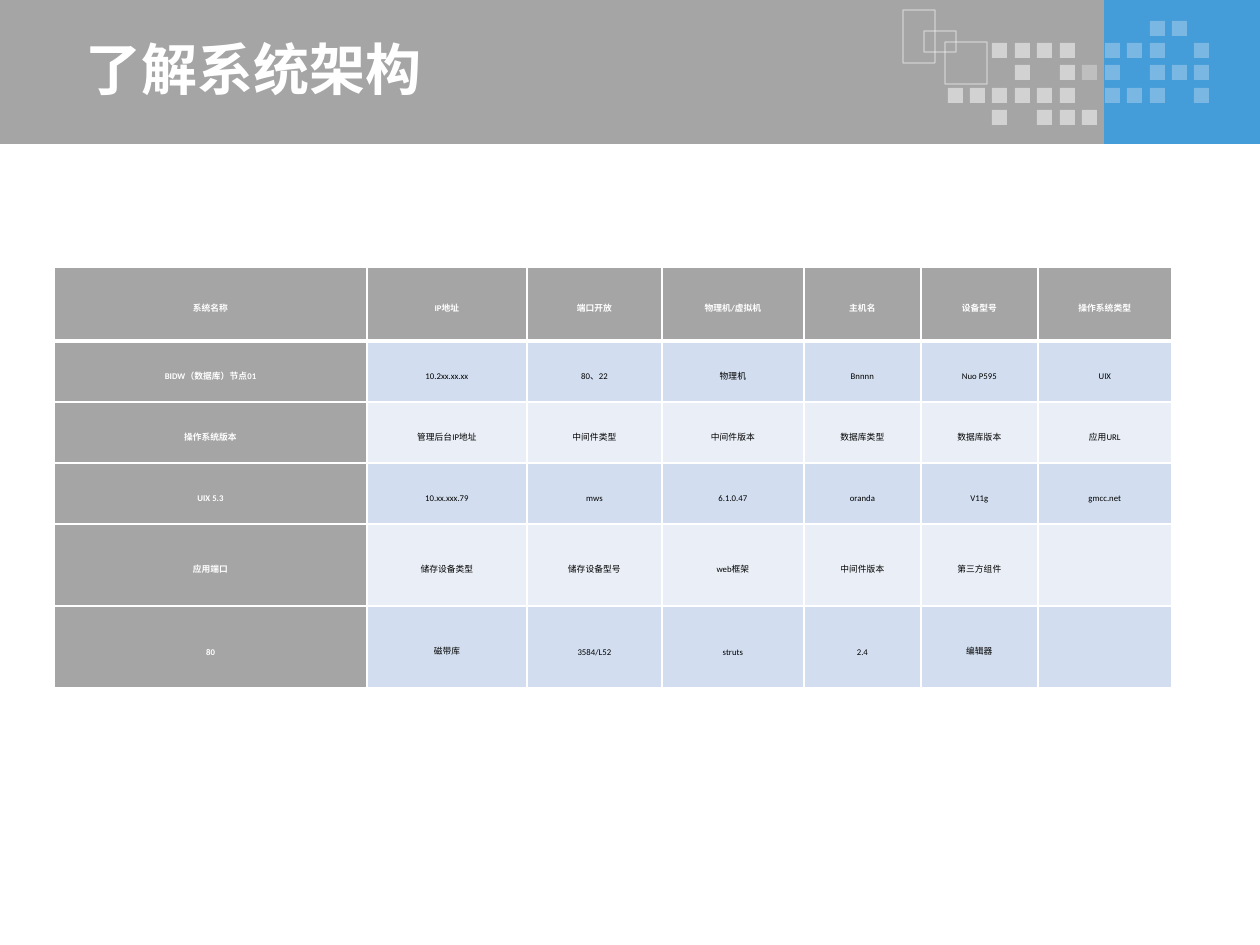
import pptx
import pptx.util
import pptx.dml.color
import pptx.enum.shapes
import pptx.enum.text
import pptx.oxml.ns
import pptx.oxml.xmlchemy
from lxml import etree

SCALE = 914400 / 126
HAN = "Noto Sans CJK SC"
HUES = {
    "white": "FFFFFF", "black": "000000", "gray": "A5A5A5",
    "blue": "449CD8", "dark": "D2DEEF", "light": "EAEFF7",
}

# Mosaic: "#" is a stronger tile, "o" a fainter one
TILES = [
    ".........oo.",
    "..####.ooo.o",
    "...#.#oo.ooo",
    "######.ooo.o",
    "..#.###.....",
]
ALPHA = {"#": 50, "o": 29}
FRAMES = [(903, 10, 32, 53), (924, 31, 32, 21), (945, 42, 42, 42)]

COLS = [313, 160, 135, 142, 117, 117, 134]
ROWS = [74, 61, 61, 61, 82, 82]
CELLS = [
    ["系统名称", "IP地址", "端口开放", "物理机/虚拟机", "主机名", "设备型号", "操作系统类型"],
    ["BIDW（数据库）节点01", "10.2xx.xx.xx", "80、22", "物理机", "Bnnnn", "Nuo P595", "UIX"],
    ["操作系统版本", "管理后台IP地址", "中间件类型", "中间件版本", "数据库类型", "数据库版本", "应用URL"],
    ["UIX 5.3", "10.xx.xxx.79", "mws", "6.1.0.47", "oranda", "V11g", "gmcc.net"],
    ["应用端口", "储存设备类型", "储存设备型号", "web框架", "中间件版本", "第三方组件", ""],
    ["80", "磁带库", "3584/L52", "struts", "2.4", "编辑器", ""],
]


def px(num):
    return pptx.util.Emu(round(num * SCALE))


def rgb(hue):
    return pptx.dml.color.RGBColor.from_string(HUES[hue])


def node(root, tag, **attrs):
    item = etree.SubElement(root, pptx.oxml.ns.qn(tag))
    for key, val in attrs.items():
        item.set(key, str(val))
    return item


def fade(shape, alpha):
    for color in shape._element.spPr.iter(pptx.oxml.ns.qn("a:srgbClr")):
        node(color, "a:alpha", val=alpha * 1000)


def rect(slide, box, fill=None, line=None, alpha=None):
    kind = pptx.enum.shapes.MSO_SHAPE.RECTANGLE
    shape = slide.shapes.add_shape(kind, *map(px, box))
    shape.shadow.inherit = False
    if fill:
        shape.fill.solid()
        shape.fill.fore_color.rgb = rgb(fill)
    else:
        shape.fill.background()
    if line:
        shape.line.color.rgb = rgb(line)
        shape.line.width = pptx.util.Pt(0.75)
    else:
        shape.line.fill.background()
    if alpha:
        fade(shape, alpha)


def write(frame, text, size, hue, bold=True, face=HAN, align="LEFT", lead=None):
    para = frame.paragraphs[0]
    para.alignment = getattr(pptx.enum.text.PP_ALIGN, align)
    if lead:
        para.line_spacing = pptx.util.Pt(lead)
    if not text:
        para.font.size = pptx.util.Pt(size)
        return
    run = para.add_run()
    run.text = text
    font = run.font
    font.size = pptx.util.Pt(size)
    font.bold = bold
    font.color.rgb = rgb(hue)
    font.name = face
    node(run._r.get_or_add_rPr(), "a:ea", typeface=HAN)


def edge(cell, sides):
    props = cell._tc.get_or_add_tcPr()
    for side, width in sides.items():
        line = node(props, "a:ln" + side, w=pptx.util.Pt(width))
        node(node(line, "a:solidFill"), "a:srgbClr", val=HUES["white"])


def header(slide):
    rect(slide, (1104, 0, 156, 144), fill="blue")
    rect(slide, (0, 0, 1104, 144), fill="gray")
    for row, marks in enumerate(TILES):
        for col, mark in enumerate(marks):
            if mark in ALPHA:
                box = (948 + col * 449 // 20, 21 + row * 449 // 20, 15, 15)
                rect(slide, box, fill="white", alpha=ALPHA[mark])
    for box in FRAMES:
        rect(slide, box, line="white", alpha=50)


def title(slide, text):
    frame = slide.shapes.add_textbox(*map(px, (73, 35, 978, 67))).text_frame
    frame.word_wrap = True
    frame.vertical_anchor = pptx.enum.text.MSO_ANCHOR.MIDDLE
    write(frame, text, 32, "white")


def grid(slide):
    box = (54, 267, sum(COLS), sum(ROWS))
    table = slide.shapes.add_table(len(ROWS), len(COLS), *map(px, box)).table
    for col, width in zip(table.columns, COLS):
        col.width = px(width)
    for row, high in zip(table.rows, ROWS):
        row.height = px(high)
    for y, texts in enumerate(CELLS):
        for x, text in enumerate(texts):
            cell = table.cell(y, x)
            head = y == 0 or x == 0
            cell.vertical_anchor = pptx.enum.text.MSO_ANCHOR.MIDDLE
            cell.margin_left = cell.margin_right = px(8)
            cell.margin_top = cell.margin_bottom = 0
            # A thick rule parts the top row from the rest
            edge(cell, {"L": 1, "R": 1, "T": 3 if y == 1 else 1, "B": 3 if y == 0 else 1})
            cell.fill.solid()
            cell.fill.fore_color.rgb = rgb("gray" if head else "dark" if y % 2 else "light")
            write(cell.text_frame, text, 5, "white" if head else "black",
                  bold=head, face="Calibri", align="CENTER", lead=12)


def main():
    deck = pptx.Presentation()
    deck.slide_width, deck.slide_height = px(1260), px(945)
    slide = deck.slides.add_slide(deck.slide_layouts[6])
    header(slide)
    title(slide, "了解系统架构")
    grid(slide)
    deck.save("out.pptx")


if __name__ == "__main__":
    main()
